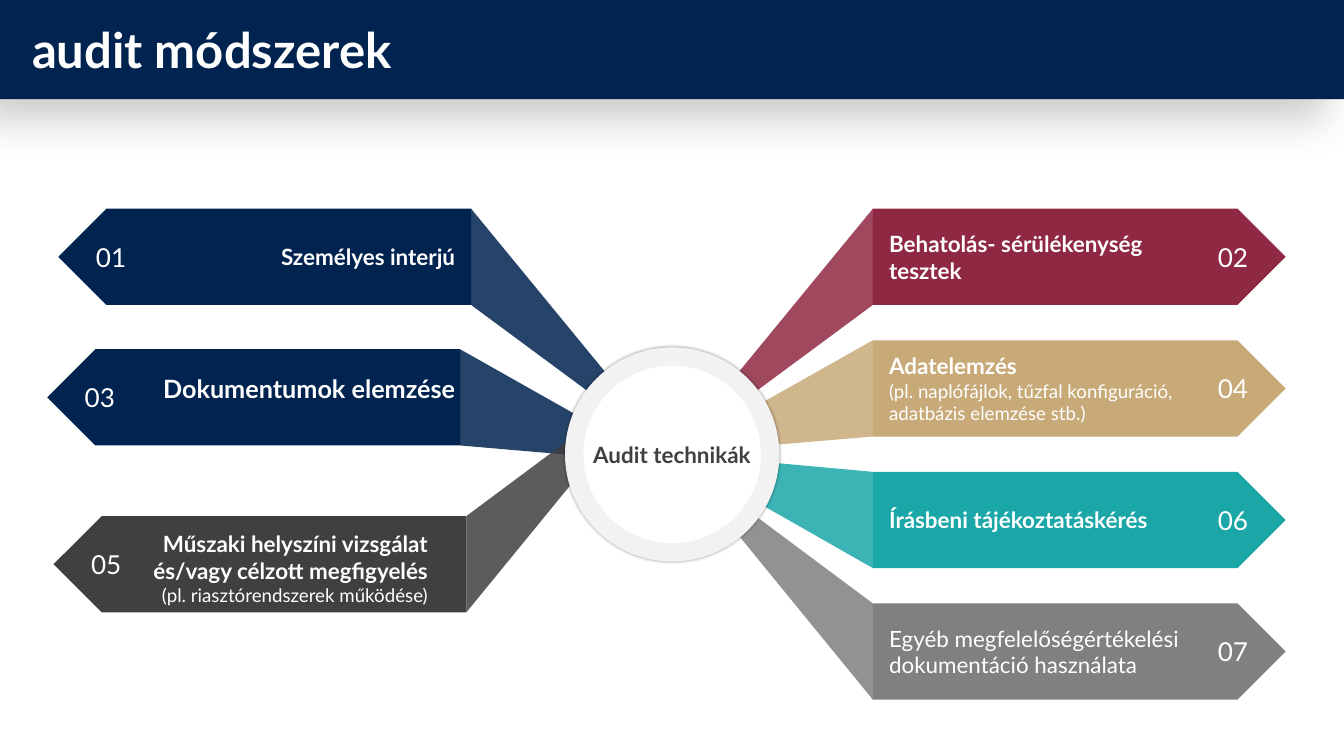
from dataclasses import dataclass

import pptx
import pptx.dml.color
import pptx.enum.shapes
import pptx.enum.text
import pptx.oxml
import pptx.oxml.ns
import pptx.util
from lxml import etree

Cm = pptx.util.Cm
Pt = pptx.util.Pt
RGBColor = pptx.dml.color.RGBColor
Shape = pptx.enum.shapes.MSO_SHAPE
Align = pptx.enum.text.PP_ALIGN
Anchor = pptx.enum.text.MSO_ANCHOR
AutoSize = pptx.enum.text.MSO_AUTO_SIZE
qn = pptx.oxml.ns.qn

NAVY = RGBColor(0x00, 0x23, 0x4F)
WINE = RGBColor(0x8F, 0x28, 0x42)
SAND = RGBColor(0xC8, 0xAA, 0x78)
TEAL = RGBColor(0x1B, 0xA6, 0xA8)
GRAY = RGBColor(0x80, 0x80, 0x80)
CHARCOAL = RGBColor(0x40, 0x40, 0x40)
PALE = RGBColor(0xF2, 0xF2, 0xF2)
WHITE = RGBColor(0xFF, 0xFF, 0xFF)

SLIDE_WIDTH, SLIDE_HEIGHT = 67.72, 38.1
HUB_X, HUB_Y = 33.86, 22.86
ARM_WIDTH, ARM_HEIGHT = 20.8, 4.85
BEAM_REACH = 10.13
RIGHT_EDGE, RIGHT_TOP, RIGHT_STEP = 43.98, 10.52, 6.63
LABEL_WIDTH = 15.85


@dataclass
class Arm:
    number: str
    color: RGBColor
    edge: float  # side that faces the hub
    top: float
    lines: list  # (text, size, bold)
    label_left: float
    label_height: float
    label_shift: float = 0  # label centre below the arm's centre
    apex_y: float = HUB_Y
    left_side: bool = False


def write(frame, lines, color=WHITE, align=Align.LEFT, anchor=Anchor.MIDDLE,
          margins=(0.25, 0.13), wrap=True, font="Lato"):
    """Fill a text frame with one paragraph per (text, size, bold) line."""
    frame.word_wrap = wrap
    frame.vertical_anchor = anchor
    frame.margin_left = frame.margin_right = Cm(margins[0])
    frame.margin_top = frame.margin_bottom = Cm(margins[1])
    for index, (text, size, bold) in enumerate(lines):
        para = frame.add_paragraph() if index else frame.paragraphs[0]
        para.alignment = align
        span = para.add_run()
        span.text = text
        span.font.name = font
        span.font.size = Pt(size)
        span.font.bold = bold
        span.font.color.rgb = color


class Painter:
    def __init__(self, page):
        self.page = page

    def paint(self, shape, color, opacity=100):
        shape.shadow.inherit = False
        shape.line.fill.background()
        shape.fill.solid()
        shape.fill.fore_color.rgb = color
        if opacity < 100:
            tone = shape.element.spPr.find(".//" + qn("a:srgbClr"))
            etree.SubElement(tone, qn("a:alpha"), val=str(opacity * 1000))
        return shape

    def shape(self, kind, left, top, width, height, color, parent=None):
        shapes = (parent or self.page).shapes
        return self.paint(shapes.add_shape(
            kind, Cm(left), Cm(top), Cm(width), Cm(height)), color)

    def shadow(self, shape, opacity, blur, distance=0, angle=0):
        effects = shape.element.spPr.find(qn("a:effectLst"))
        outer = etree.SubElement(
            effects, qn("a:outerShdw"), blurRad=str(Pt(blur)),
            dist=str(Pt(distance)), dir=str(angle * 60000), rotWithShape="0")
        tone = etree.SubElement(outer, qn("a:srgbClr"), val="000000")
        etree.SubElement(tone, qn("a:alpha"), val=str(opacity * 1000))

    def text(self, left, top, width, height, lines, **style):
        box = self.page.shapes.add_textbox(
            Cm(left), Cm(top), Cm(width), Cm(height))
        write(box.text_frame, lines, **style)
        box.text_frame.auto_size = AutoSize.SHAPE_TO_FIT_TEXT

    def arm(self, arm):
        """Draw a numbered arrow, the beam that ties it to the hub, and its label."""
        group = self.page.shapes.add_group_shape()
        apex_x = arm.edge + (BEAM_REACH if arm.left_side else -BEAM_REACH)
        outline = group.shapes.build_freeform(Cm(arm.edge), Cm(arm.top))
        outline.add_line_segments([
            (Cm(apex_x), Cm(arm.apex_y)),
            (Cm(arm.edge), Cm(arm.top + ARM_HEIGHT))])
        self.paint(outline.convert_to_shape(), arm.color, opacity=85)

        left = arm.edge - ARM_WIDTH if arm.left_side else arm.edge
        arrow = self.shape(Shape.PENTAGON, left, arm.top, ARM_WIDTH,
                           ARM_HEIGHT, arm.color, group)
        if arm.left_side:
            arrow.element.spPr.find(qn("a:xfrm")).set("flipH", "1")
        write(arrow.text_frame, [(arm.number, 37.3, False)],
              align=Align.LEFT if arm.left_side else Align.RIGHT,
              margins=(0.68, 0.34))

        center = arm.top + ARM_HEIGHT / 2 + arm.label_shift
        self.text(arm.label_left, center - arm.label_height / 2,
                  LABEL_WIDTH, arm.label_height, arm.lines,
                  align=Align.RIGHT if arm.left_side else Align.LEFT)

    def disc(self, diameter, color, parent):
        return self.shape(Shape.OVAL, HUB_X + 0.01 - diameter / 2,
                          HUB_Y + 0.04 - diameter / 2,
                          diameter, diameter, color, parent)

    def hub(self, text):
        group = self.page.shapes.add_group_shape()
        self.shadow(self.disc(10.8, PALE, group), opacity=40, blur=5)
        self.disc(8.94, WHITE, group)
        self.text(29.62, 22.2, 8.48, 1.37, [(text, 32, True)], color=CHARCOAL,
                  align=Align.CENTER, margins=(0, 0), wrap=False)

    def header(self, title):
        band = self.shape(Shape.RECTANGLE, 0, 0, SLIDE_WIDTH, 5, NAVY)
        self.shadow(band, opacity=20, blur=60, distance=40, angle=135)
        self.text(1.37, 0.86, 64.8, 3.25, [(title, 70, True)],
                  anchor=Anchor.TOP)


LEFT_ARMS = [
    Arm("01", NAVY, 23.74, RIGHT_TOP, [("Személyes interjú", 32, True)],
        7.34, 1.63, left_side=True),
    Arm("03", NAVY, 23.18, 17.6, [("Dokumentumok elemzése", 36, True)],
        7.34, 3.33, label_shift=-0.45, apex_y=23.32, left_side=True),
    Arm("05", CHARCOAL, 23.5, 26.01,
        [("Műszaki helyszíni vizsgálat és/vagy célzott megfigyelés", 32, True),
         ("(pl. riasztórendszerek működése)", 26.7, False)],
        5.97, 4.14, label_shift=0.2, apex_y=18.47, left_side=True),
]
RIGHT_ROWS = [
    ("02", WINE, 3, [("Behatolás- sérülékenység tesztek", 32, True)]),
    ("04", SAND, 3.91,
     [("Adatelemzés", 32, True),
      ("(pl. naplófájlok, tűzfal konfiguráció, adatbázis elemzése stb.)",
       26.7, False)]),
    ("06", TEAL, 1.63, [("Írásbeni tájékoztatáskérés", 32, True)]),
    ("07", GRAY, 3,
     [("Egyéb megfelelőségértékelési dokumentáció használata", 32, False)]),
]


def main():
    deck = pptx.Presentation()
    deck.slide_width, deck.slide_height = Cm(SLIDE_WIDTH), Cm(SLIDE_HEIGHT)
    painter = Painter(deck.slides.add_slide(deck.slide_layouts[6]))
    for arm in LEFT_ARMS:
        painter.arm(arm)
    for row, (number, color, height, lines) in enumerate(RIGHT_ROWS):
        painter.arm(Arm(number, color, RIGHT_EDGE, RIGHT_TOP + row * RIGHT_STEP,
                        lines, 44.55, height))
    painter.hub("Audit technikák")
    painter.header("audit módszerek")
    deck.save("out.pptx")


if __name__ == "__main__":
    main()
